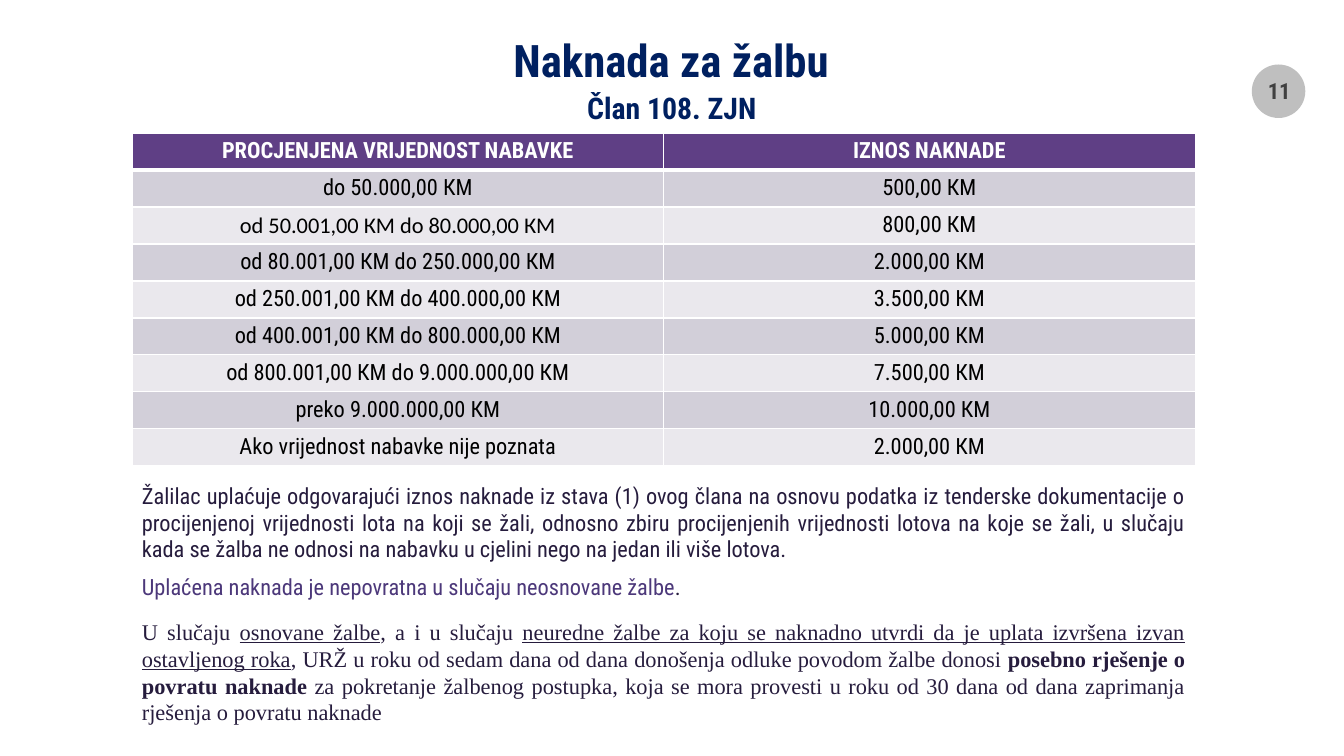
from dataclasses import dataclass

from pptx import Presentation
from pptx.dml.color import RGBColor
from pptx.enum.shapes import MSO_SHAPE
from pptx.enum.text import MSO_ANCHOR, PP_ALIGN
from pptx.oxml import parse_xml
from pptx.oxml.ns import nsdecls
from pptx.util import Pt

OVAL = MSO_SHAPE.OVAL
TOP, MIDDLE = MSO_ANCHOR.TOP, MSO_ANCHOR.MIDDLE
LEFT, CENTER, JUSTIFY = PP_ALIGN.LEFT, PP_ALIGN.CENTER, PP_ALIGN.JUSTIFY


@dataclass(frozen=True)
class Theme:
    font: str = "Roboto Condensed"
    calibri: str = "Calibri"
    serif: str = "Times New Roman"
    title_size: float = 32
    subtitle_size: float = 21.3
    body_size: float = 16
    navy: str = "002060"
    ink: str = "261C3D"
    purple: str = "4C387A"
    header: str = "5F3F85"
    bands: tuple = ("D2CFD9", "EAE8ED")
    white: str = "FFFFFF"
    black: str = "000000"
    badge: str = "BFBFBF"
    number: str = "404040"


T = Theme()

TITLE = "Naknada za žalbu"
SUBTITLE = "Član 108. ZJN"
PAGE = "11"
FEES = [
    ("PROCJENJENA VRIJEDNOST NABAVKE", "IZNOS NAKNADE"),
    ("do 50.000,00 КМ", "500,00 КМ"),
    ("od 50.001,00 КМ dо 80.000,00 КМ", "800,00 КМ"),
    ("od 80.001,00 КМ dо 250.000,00 КМ", "2.000,00 КМ"),
    ("od 250.001,00 КМ dо 400.000,00 КМ", "3.500,00 КМ"),
    ("od 400.001,00 КМ dо 800.000,00 КМ", "5.000,00 КМ"),
    ("od 800.001,00 КМ dо 9.000.000,00 КМ", "7.500,00 КМ"),
    ("preko 9.000.000,00 КМ", "10.000,00 КМ"),
    ("Ako vrijednost nabavke nije poznata", "2.000,00 КМ"),
]
CALIBRI_CELL = (2, 0)

# Each run is its text and the format that departs from the paragraph's.
BASIS = [("Žalilac uplaćuje odgovarajući iznos naknade iz stava (1) ovog člana na osnovu "
          "podatka iz tenderske dokumentacije o procijenjenoj vrijednosti lota na koji se "
          "žali, odnosno zbiru procijenjenih vrijednosti lotova na koje se žali, u slučaju "
          "kada se žalba ne odnosi na nabavku u cjelini nego na jedan ili više lotova.", {})]
NO_REFUND = [("Uplaćena naknada je nepovratna u slučaju neosnovane žalbe", {"color": T.purple}),
             (".", {})]
REFUND = [
    ("U slučaju ", {}),
    ("osnovane žalbe", {"underline": True}),
    (", a i u slučaju ", {}),
    ("neuredne žalbe za koju se naknadno utvrdi da je uplata izvršena izvan "
     "ostavljenog roka", {"underline": True}),
    (", URŽ u roku od sedam dana od dana donošenja odluke povodom žalbe donosi ", {}),
    ("posebno rješenje o povratu naknade ", {"bold": True}),
    ("za pokretanje žalbenog postupka, koja se mora provesti u roku od 30 dana od dana "
     "zaprimanja rješenja o povratu naknade", {}),
]

SLIDE_W, SLIDE_H = 960, 540
MARGIN, CONTENT_W = 94.3, 759.4
TABLE_TOP, ROW_H = 95, 24.5
# top, height, alignment, font, runs
NOTES = [
    (340.6, 65.5, JUSTIFY, T.font, BASIS),
    (406.1, 26.6, LEFT, T.font, NO_REFUND),
    (437.8, 85, JUSTIFY, T.serif, REFUND),
]


def style(r, size=T.body_size, font=T.font, color=T.ink, bold=False, underline=False):
    f = r.font
    f.size, f.name, f.bold, f.underline = Pt(size), font, bold, underline
    f.color.rgb = RGBColor.from_string(color)


def add_text(slide, box, runs, align, anchor=TOP, insets=(7.2, 3.6), wrap=True, **base):
    tf = slide.shapes.add_textbox(*map(Pt, box)).text_frame
    tf.word_wrap, tf.vertical_anchor = wrap, anchor
    tf.margin_left = tf.margin_right = Pt(insets[0])
    tf.margin_top = tf.margin_bottom = Pt(insets[1])
    p = tf.paragraphs[0]
    p.alignment = align
    for text, changes in runs:
        r = p.add_run()
        r.text = text
        style(r, **{**base, **changes})


def set_borders(cell, top, bottom):
    """Draw white cell edges; must run before the cell gets its fill."""
    tcPr = cell._tc.get_or_add_tcPr()
    for side, width in (("L", 1), ("R", 1), ("T", top), ("B", bottom)):
        tcPr.append(parse_xml(
            f'<a:ln{side} {nsdecls("a")} w="{Pt(width)}"><a:solidFill>'
            f'<a:srgbClr val="{T.white}"/></a:solidFill></a:ln{side}>'))


def add_fee_table(slide):
    rows, cols = len(FEES), len(FEES[0])
    table = slide.shapes.add_table(rows, cols, Pt(MARGIN), Pt(TABLE_TOP),
                                   Pt(CONTENT_W), Pt(ROW_H * rows)).table
    for i, values in enumerate(FEES):
        head = i == 0
        fill = T.header if head else T.bands[(i - 1) % 2]
        for j, value in enumerate(values):
            cell = table.cell(i, j)
            set_borders(cell, top=3 if i == 1 else 1, bottom=3 if head else 1)
            cell.fill.solid()
            cell.fill.fore_color.rgb = RGBColor.from_string(fill)
            p = cell.text_frame.paragraphs[0]
            p.text = value
            p.alignment = CENTER
            style(p.runs[0], bold=head, color=T.white if head else T.black,
                  font=T.calibri if (i, j) == CALIBRI_CELL else T.font)


def add_page_badge(slide):
    sp = slide.shapes.add_shape(OVAL, Pt(894.2), Pt(46.1), Pt(38.2), Pt(38.2))
    sp.shadow.inherit = False
    sp.fill.solid()
    sp.fill.fore_color.rgb = RGBColor.from_string(T.badge)
    sp.line.fill.background()
    add_text(slide, (891.4, 47.5, 44.6, 34.6), [(PAGE, {})], CENTER, MIDDLE,
             insets=(9.4, 5), color=T.number, bold=True)


def main():
    prs = Presentation()
    prs.slide_width, prs.slide_height = Pt(SLIDE_W), Pt(SLIDE_H)
    s = prs.slides.add_slide(prs.slide_layouts[6])
    add_page_badge(s)
    add_text(s, (229.7, 20.9, 499.7, 43.9), [(TITLE, {})], CENTER, MIDDLE, insets=(0, 0),
             wrap=False, size=T.title_size, color=T.navy, bold=True)
    add_text(s, (343.4, 66.2, 272.9, 20.9), [(SUBTITLE, {})], CENTER, MIDDLE, insets=(0, 0),
             size=T.subtitle_size, color=T.navy, bold=True)
    add_fee_table(s)
    for top, height, align, font, runs in NOTES:
        add_text(s, (MARGIN, top, CONTENT_W, height), runs, align, font=font)
    prs.save("out.pptx")


if __name__ == "__main__":
    main()
